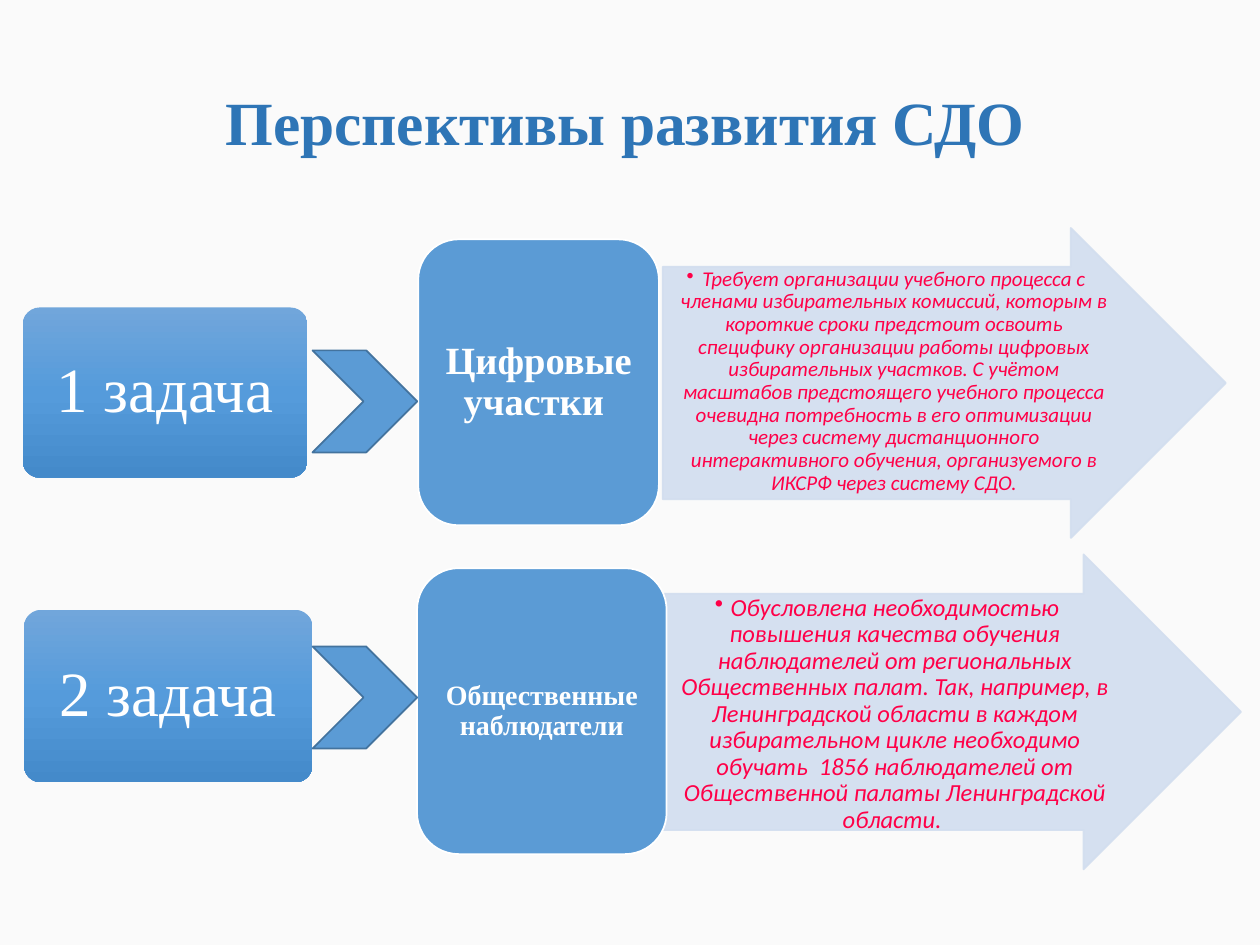
from copy import deepcopy

from lxml import etree
from pptx import Presentation
from pptx import util as u
from pptx.dml.color import RGBColor
from pptx.enum import shapes, text
from pptx.oxml.ns import qn

COLORS = {
    "background": "FAFAFA",
    "title": "2E75B6",
    "block": "5B9BD5",
    "chevron_line": "43739E",
    "arrow": "D2DEEF",
    "detail": "FF0048",
    "white": "FFFFFF",
    "label_top": "71A6DB",
    "label_middle": "559BDB",
    "label_bottom": "448ACA",
}
SERIF = "Times New Roman"
SANS = "Calibri"
KIND = shapes.MSO_SHAPE

TASKS = [
    {
        "label": "1 задача",
        "label_at": (13, 175.7, 162.7, 97.2),
        "arrow_at": (378.7, 130.3, 321.8, 177.1),
        "detail": "Требует организации учебного процесса с членами избирательных комиссий, "
                  "которым в короткие сроки предстоит освоить специфику организации работы "
                  "цифровых избирательных участков. С учётом масштабов предстоящего учебного "
                  "процесса очевидна потребность в его оптимизации через систему "
                  "дистанционного интерактивного обучения, организуемого в ИКСРФ через "
                  "систему СДО.",
        "detail_size": 12,
        "block": "Цифровые участки ",
        "block_at": (239, 136.8, 137.5, 163.4),
        "block_size": 22,
        "block_inset": (6.5, 3.6),
        "chevron_top": 200.2,
    },
    {
        "label": "2 задача",
        "label_at": (13.7, 348.5, 164.9, 98.6),
        "arrow_at": (372.2, 316.8, 337, 180),
        "detail": "Обусловлена необходимостью повышения качества обучения наблюдателей от "
                  "региональных Общественных палат. Так, например, в Ленинградской области в "
                  "каждом избирательном цикле необходимо обучать  1856 наблюдателей от "
                  "Общественной палаты Ленинградской области. ",
        "detail_size": 14,
        "block": "Общественные наблюдатели",
        "block_at": (238.3, 324.7, 142.6, 163.4),
        "block_size": 16,
        "block_inset": (5, 2.2),
        "chevron_top": 369.4,
    },
]


def color(name):
    return RGBColor.from_string(COLORS[name])


def points(values):
    return [u.Pt(value) for value in values]


def shrink(at, pad):
    left, top, width, height = at
    return left + pad, top + pad, width - 2 * pad, height - 2 * pad


class SlideBuilder:
    def __init__(self, page):
        self.page = page
        page.background.fill.solid()
        page.background.fill.fore_color.rgb = color("background")

    def shape(self, kind, at, fill=None, line=None, adjustments=()):
        shape = self.page.shapes.add_shape(kind, *points(at))
        shape.shadow.inherit = False
        for index, value in enumerate(adjustments):
            shape.adjustments[index] = value
        if fill:
            shape.fill.solid()
            shape.fill.fore_color.rgb = color(fill)
        if line:
            shape.line.color.rgb = color(line)
            shape.line.width = u.Pt(1)
        else:
            shape.line.fill.background()
        return shape

    def text(self, content, at, size, ink, font=SERIF, inset=(7.2, 3.6),
             bold=False, italic=False, bullet=False):
        box = self.page.shapes.add_textbox(*points(at))
        frame = box.text_frame
        frame.word_wrap = True
        frame.margin_left = frame.margin_right = u.Pt(inset[0])
        frame.margin_top = frame.margin_bottom = u.Pt(inset[1])
        frame.vertical_anchor = text.MSO_ANCHOR.TOP if bullet else text.MSO_ANCHOR.MIDDLE
        frame.text = content
        para = frame.paragraphs[0]
        para.alignment = text.PP_ALIGN.CENTER
        para.line_spacing = 0.9
        if bullet:
            para.level = 1
            properties = para._p.get_or_add_pPr()
            properties.set("marL", str(u.Pt(9)))
            properties.set("indent", str(u.Pt(-9)))
            etree.SubElement(properties, qn("a:buChar"), char="•")
        span = para.runs[0]
        span.font.name = font
        span.font.size = u.Pt(size)
        span.font.bold = bold
        span.font.italic = italic
        span.font.color.rgb = color(ink)
        return span

    def title(self, content, at):
        span = self.text(content, at, 35.1, "title", bold=True)
        outline = etree.Element(qn("a:ln"), w=str(u.Pt(0.75)))
        fill = etree.SubElement(outline, qn("a:solidFill"))
        etree.SubElement(fill, qn("a:srgbClr"), val=COLORS["white"])
        span.font._element.insert(0, outline)

    def label(self, content, at):
        plate = self.shape(KIND.ROUNDED_RECTANGLE, at, adjustments=[0.1])
        plate.fill.gradient()
        plate.fill.gradient_angle = 270
        stop_list = plate._element.spPr.find(f".//{qn('a:gsLst')}")
        stop_list.append(deepcopy(stop_list[-1]))
        names = ("label_top", "label_middle", "label_bottom")
        for index, (stop, name) in enumerate(zip(plate.fill.gradient_stops, names)):
            stop.color.rgb = color(name)
            stop.position = index / 2
        self.text(content, shrink(at, 2.9), 36, "white", inset=(10.8, 10.8))

    def arrow(self, content, at, size):
        arrow = self.shape(KIND.RIGHT_ARROW, at, "arrow", "arrow", [0.75, 0.5])
        for tint in arrow._element.spPr.iter(qn("a:srgbClr")):
            etree.SubElement(tint, qn("a:alpha"), val="90000")
        left, top, width, height = at
        area = (left, top + height / 8, width - height * 0.375, height * 0.75)
        self.text(content, area, size, "detail", SANS, (0.7, 0.7), italic=True, bullet=True)

    def block(self, content, at, size, inset):
        self.shape(KIND.ROUNDED_RECTANGLE, at, "block", "white")
        self.text(content, shrink(at, 6.8), size, "white", inset=inset, bold=True)

    def chevron(self, top):
        self.shape(KIND.CHEVRON, (178.6, top, 59.8, 58.3), "block", "chevron_line")


def main():
    deck = Presentation()
    deck.slide_width, deck.slide_height = points((720, 540))
    builder = SlideBuilder(deck.slides.add_slide(deck.slide_layouts[6]))
    builder.title("Перспективы развития СДО", (46.8, 36, 620.6, 71.3))
    for task in TASKS:
        builder.label(task["label"], task["label_at"])
        builder.arrow(task["detail"], task["arrow_at"], task["detail_size"])
        builder.block(task["block"], task["block_at"], task["block_size"], task["block_inset"])
        builder.chevron(task["chevron_top"])
    deck.save("out.pptx")


if __name__ == "__main__":
    main()
